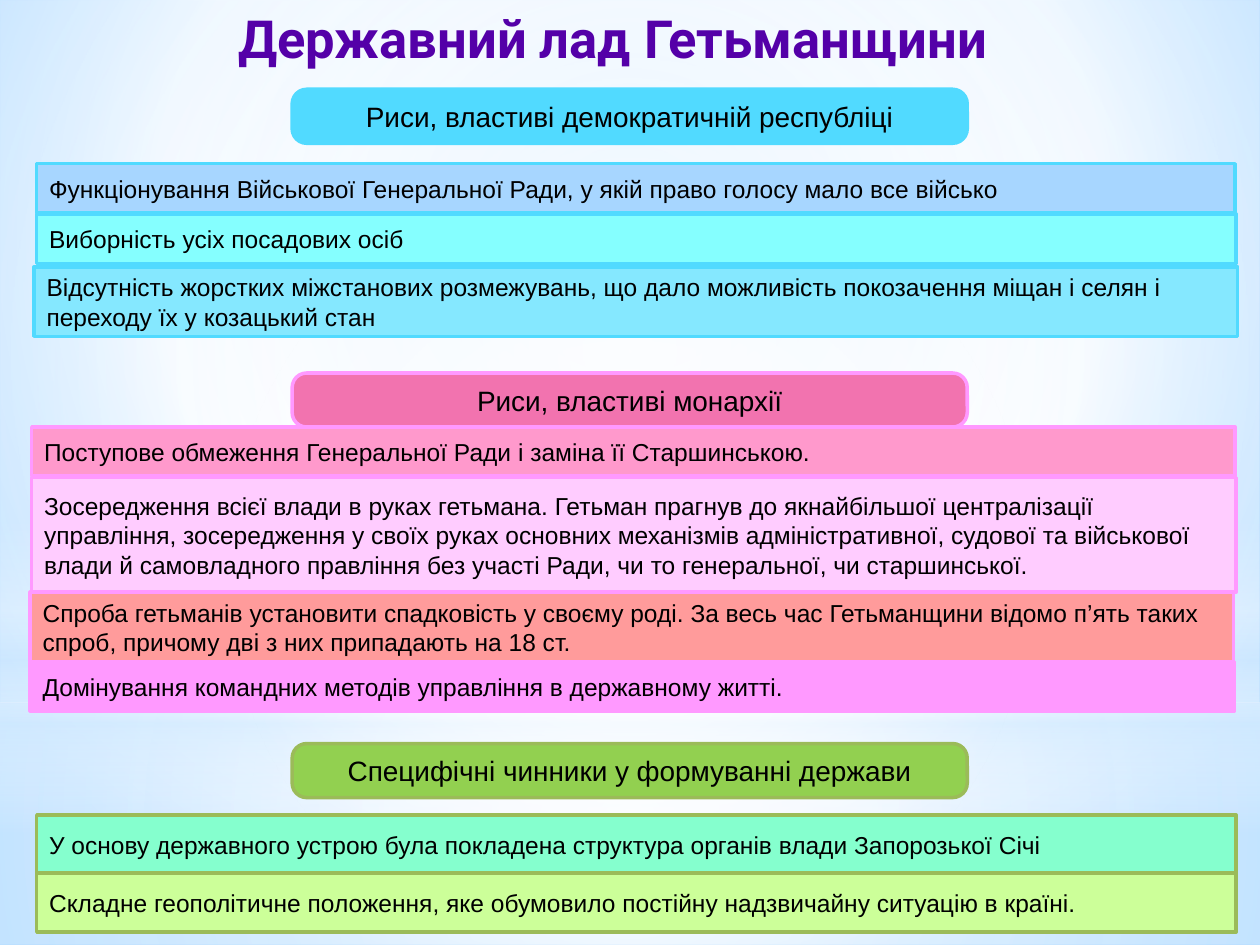
from lxml import etree
from pptx import Presentation
from pptx.dml.color import RGBColor
from pptx.enum.shapes import MSO_SHAPE
from pptx.enum.text import MSO_ANCHOR, PP_ALIGN
from pptx.oxml.ns import qn
from pptx.util import Cm, Pt

RECTANGLE, OVAL, ROUNDED = MSO_SHAPE.RECTANGLE, MSO_SHAPE.OVAL, MSO_SHAPE.ROUNDED_RECTANGLE
TOP, MIDDLE = MSO_ANCHOR.TOP, MSO_ANCHOR.MIDDLE
LEFT, CENTER = PP_ALIGN.LEFT, PP_ALIGN.CENTER


def color(value):
    return RGBColor.from_string(value)


def set_gradient(owner, stops, focus=None):
    """Fill owner with (position, colour, opacity) stops in percent.

    The gradient is circular around the focus insets, or vertical without them.
    """
    owner.fill.gradient()
    gradient = next(owner._element.iter(qn("a:gradFill")))
    for child in list(gradient):
        gradient.remove(child)
    stop_list = etree.SubElement(gradient, qn("a:gsLst"))
    for position, value, opacity in stops:
        stop = etree.SubElement(stop_list, qn("a:gs"), pos=str(position * 1000))
        rgb = etree.SubElement(stop, qn("a:srgbClr"), val=value)
        if opacity < 100:
            etree.SubElement(rgb, qn("a:alpha"), val=str(opacity * 1000))
    if focus:
        path = etree.SubElement(gradient, qn("a:path"), path="circle")
        insets = {side: str(inset * 1000) for side, inset in zip("ltrb", focus)}
        etree.SubElement(path, qn("a:fillToRect"), **insets)
    else:
        etree.SubElement(gradient, qn("a:lin"), ang="5400000", scaled="0")


presentation = Presentation()
presentation.slide_width = Cm(25.4)
presentation.slide_height = Cm(19.05)
slide = presentation.slides.add_slide(presentation.slide_layouts[6])

# Background glow
background = slide.background
background.fill.gradient()
background._element = slide._element
set_gradient(background, [(0, "C2E3FF", 100), (60, "FFFFFF", 100), (100, "79C1FF", 100)],
             (20, 10, 20, 60))
middle_focus = (50, 50, 50, 50)
glows = [
    (RECTANGLE, 14.17, 4.88, middle_focus,
     [(0, "FFFFFF", 91), (37, "FFFFFF", 76), (100, "D6ECFF", 79)]),
    (RECTANGLE, 0, 14.17, middle_focus,
     [(0, "FFFFFF", 89), (48, "FFFFFF", 62), (100, "D6ECFF", 79)]),
    (RECTANGLE, 10.46, 6.35, None,
     [(0, "FFFFFF", 0), (29, "FFFFFF", 30), (45, "D6ECFF", 40),
      (55, "FFFFFF", 26), (65, "D6ECFF", 60), (100, "FFFFFF", 0)]),
    (OVAL, 4.45, 14.17, middle_focus,
     [(0, "FFFFFF", 100), (56, "FFFFFF", 0)]),
]
for kind, top, height, focus, stops in glows:
    shape = slide.shapes.add_shape(kind, 0, Cm(top), presentation.slide_width, Cm(height))
    shape.shadow.inherit = False
    shape.line.fill.background()
    set_gradient(shape, stops, focus)

# Title
title = slide.shapes.add_textbox(Cm(2.72), 0, Cm(19.28), Cm(1.35))
title.text_frame.word_wrap = True
title.text_frame.vertical_anchor = TOP
paragraph = title.text_frame.paragraphs[0]
paragraph.text = "Державний лад Гетьманщини"
paragraph.alignment = CENTER
paragraph.font.name = "Roboto"
paragraph.font.size = Pt(30)
paragraph.font.bold = True
paragraph.font.color.rgb = color("5400A8")

# Sections: heading, heading top, heading fill, outline, rows
# Rows: left, top, width, height, fill, text
sections = [
    ("Риси, властиві демократичній республіці", 1.8, "51DAFF", "51DAFF", [
        (0.74, 3.3, 24.16, 0.99, "A7D6FF",
         "Функціонування Військової Генеральної Ради, у якій право голосу мало все військо"),
        (0.74, 4.32, 24.18, 0.99, "85FFFF", "Виборність усіх посадових осіб"),
        (0.69, 5.38, 24.26, 1.4, "85E8FF",
         "Відсутність жорстких міжстанових розмежувань, що дало можливість покозачення "
         "міщан і селян і переходу їх у козацький стан"),
    ]),
    ("Риси, властиві монархії", 7.52, "F273AF", "FF99FF", [
        (0.64, 8.61, 24.26, 0.99, "FF99CC",
         "Поступове обмеження Генеральної Ради і заміна її Старшинською."),
        (0.64, 9.63, 24.28, 2.31, "FFCCFF",
         "Зосередження всієї влади в руках гетьмана. Гетьман прагнув до якнайбільшої "
         "централізації управління, зосередження у своїх руках основних механізмів "
         "адміністративної, судової та військової влади й самовладного правління без "
         "участі Ради, чи то генеральної, чи старшинської."),
        (0.61, 11.94, 24.26, 1.4, "FF9B9B",
         "Спроба гетьманів установити спадковість у своєму роді. За весь час Гетьманщини "
         "відомо п’ять таких спроб, причому дві з них припадають на 18 ст."),
        (0.61, 13.34, 24.28, 0.99, "FF99FF",
         "Домінування командних методів управління в державному житті."),
    ]),
    ("Специфічні чинники у формуванні держави", 14.99, "92D050", "9BBB59", [
        (0.74, 16.43, 24.18, 1.19, "85FFCE",
         "У основу державного устрою була покладена структура органів влади Запорозької Січі"),
        (0.74, 17.6, 24.18, 1.19, "CCFF99",
         "Складне геополітичне положення, яке обумовило постійну надзвичайну ситуацію в країні."),
    ]),
]
for heading, heading_top, heading_fill, outline, rows in sections:
    heading_box = (5.89, heading_top, 13.61, 1.09, heading_fill, heading)
    for box in [heading_box] + rows:
        left, top, width, height, fill, text = box
        is_heading = box is heading_box
        shape = slide.shapes.add_shape(ROUNDED, Cm(left), Cm(top), Cm(width), Cm(height))
        shape.adjustments[0] = 0.27 if is_heading else 0
        shape.shadow.inherit = False
        shape.fill.solid()
        shape.fill.fore_color.rgb = color(fill)
        shape.line.color.rgb = color(outline)
        shape.line.width = Pt(2)
        shape.text_frame.word_wrap = True
        shape.text_frame.vertical_anchor = MIDDLE
        paragraph = shape.text_frame.paragraphs[0]
        paragraph.text = text
        paragraph.alignment = CENTER if is_heading else LEFT
        paragraph.font.name = "Arial"
        paragraph.font.size = Pt(16 if is_heading else 14)
        paragraph.font.color.rgb = color("000000")

presentation.save("out.pptx")
